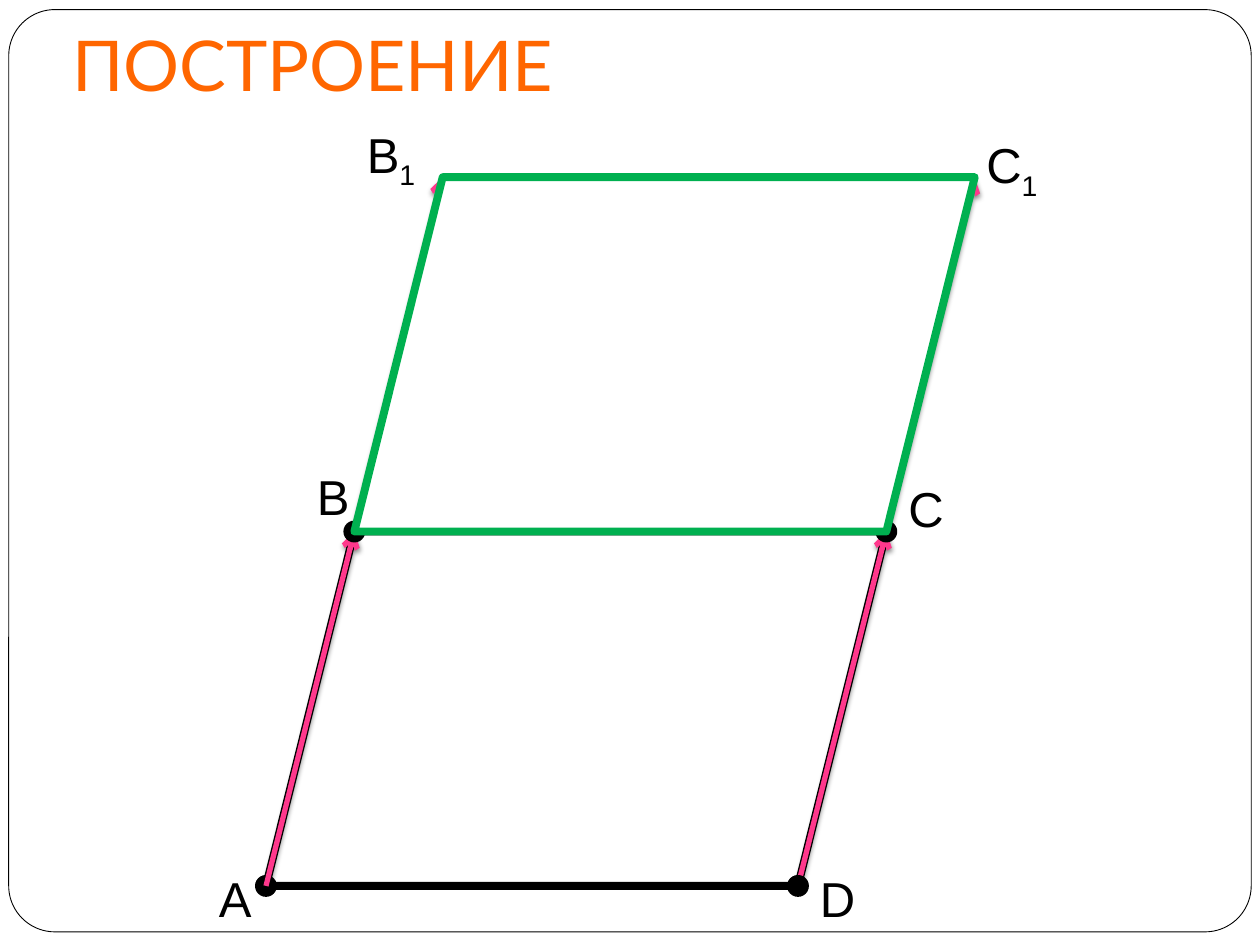
from lxml import etree
from pptx import Presentation
from pptx.dml.color import RGBColor
from pptx.enum import shapes, text
from pptx.oxml import ns
from pptx.util import Pt

HEADING = "ПОСТРОЕНИЕ"
LABELS = [
    ("D", "", 461.5, 493, 50.5),
    ("А", "", 118, 493, 44.5),
    ("С", "", 512, 270, 78.5),
    ("В", "1", 202.5, 67.5, 62),
    ("В", "", 174, 263, 44.5),
    ("С", "1", 556.5, 73.5, 62),
]
BASE, SHIFT, RISE = 304, 50.5, 202.5
DOT = 11.5
A = (152, 506.25)
D = (A[0] + BASE, A[1])


def translated(point):
    return point[0] + SHIFT, point[1] - RISE


B, C = translated(A), translated(D)


def color(value):
    return RGBColor.from_string(value)


def add_figure(preset, box, fill, line, weight):
    figure = slide.shapes.add_shape(preset, *map(Pt, box))
    figure.shadow.inherit = False
    figure.fill.solid()
    figure.fill.fore_color.rgb = color(fill)
    figure.line.color.rgb = color(line)
    figure.line.width = Pt(weight)
    return figure


def add_parallelogram(corner, line):
    left, top = translated(corner)[0] - SHIFT, corner[1] - RISE
    box = (left, top, BASE + SHIFT, RISE)
    figure = add_figure(shapes.MSO_SHAPE.PARALLELOGRAM, box, "FFFFFF", line, 4.5)
    figure.adjustments[0] = SHIFT / RISE


def add_dot(point):
    box = (point[0] - DOT / 2, point[1] - DOT / 2, DOT, DOT)
    add_figure(shapes.MSO_SHAPE.OVAL, box, "000000", "000000", 1)


def add_vector(start):
    ends = map(Pt, start + translated(start))
    vector = slide.shapes.add_connector(shapes.MSO_CONNECTOR.STRAIGHT, *ends)
    vector.line.color.rgb = color("FF388C")
    vector.line.width = Pt(3)
    outline = vector.line._get_or_add_ln()
    etree.SubElement(outline, ns.qn("a:tailEnd"), type="arrow")
    effects = etree.SubElement(vector._element.spPr, ns.qn("a:effectLst"))
    shadow = etree.SubElement(
        effects, ns.qn("a:outerShdw"), blurRad=str(Pt(3)), dist=str(Pt(2)),
        dir="5400000", rotWithShape="0")
    tint = etree.SubElement(shadow, ns.qn("a:srgbClr"), val="000000")
    etree.SubElement(tint, ns.qn("a:alpha"), val="50000")


def add_label(letter, index, left, top, width):
    label = slide.shapes.add_textbox(Pt(left), Pt(top), Pt(width), Pt(41))
    frame = label.text_frame
    frame.word_wrap = True
    frame.auto_size = text.MSO_AUTO_SIZE.SHAPE_TO_FIT_TEXT
    paragraph = frame.paragraphs[0]
    paragraph.font.name = "Arial"
    paragraph.font.size = Pt(28)
    paragraph.font.color.rgb = color("000000")
    paragraph.add_run().text = letter
    if index:
        subscript = paragraph.add_run()
        subscript.text = index
        subscript.font._element.set("baseline", "-25000")


prs = Presentation()
prs.slide_width, prs.slide_height = Pt(720), Pt(540)
slide = prs.slides.add_slide(prs.slide_layouts[5])

border = add_figure(shapes.MSO_SHAPE.ROUNDED_RECTANGLE, (5, 5.5, 710, 527),
                    "FFFFFF", "000000", 0.5)
border.adjustments[0] = 0.05
title = slide.shapes.title
border._element.addnext(title._element)

title.left, title.top, title.width, title.height = map(Pt, (34, 5.5, 624, 62))
heading = title.text_frame
heading.text = HEADING
heading.vertical_anchor = text.MSO_ANCHOR.BOTTOM
heading.margin_bottom = Pt(7.2)
heading.auto_size = text.MSO_AUTO_SIZE.NONE
line = heading.paragraphs[0]
line.alignment = text.PP_ALIGN.LEFT
line.font.name = "Lato"
line.font.size = Pt(40)
line.font.color.rgb = color("FF6600")

for label in LABELS:
    add_label(*label)
add_parallelogram(A, "000000")
add_dot(A)
for start in (B, C, A, D):
    add_vector(start)
for point in (B, D, C):
    add_dot(point)
add_parallelogram(B, "00B050")

prs.save("out.pptx")
